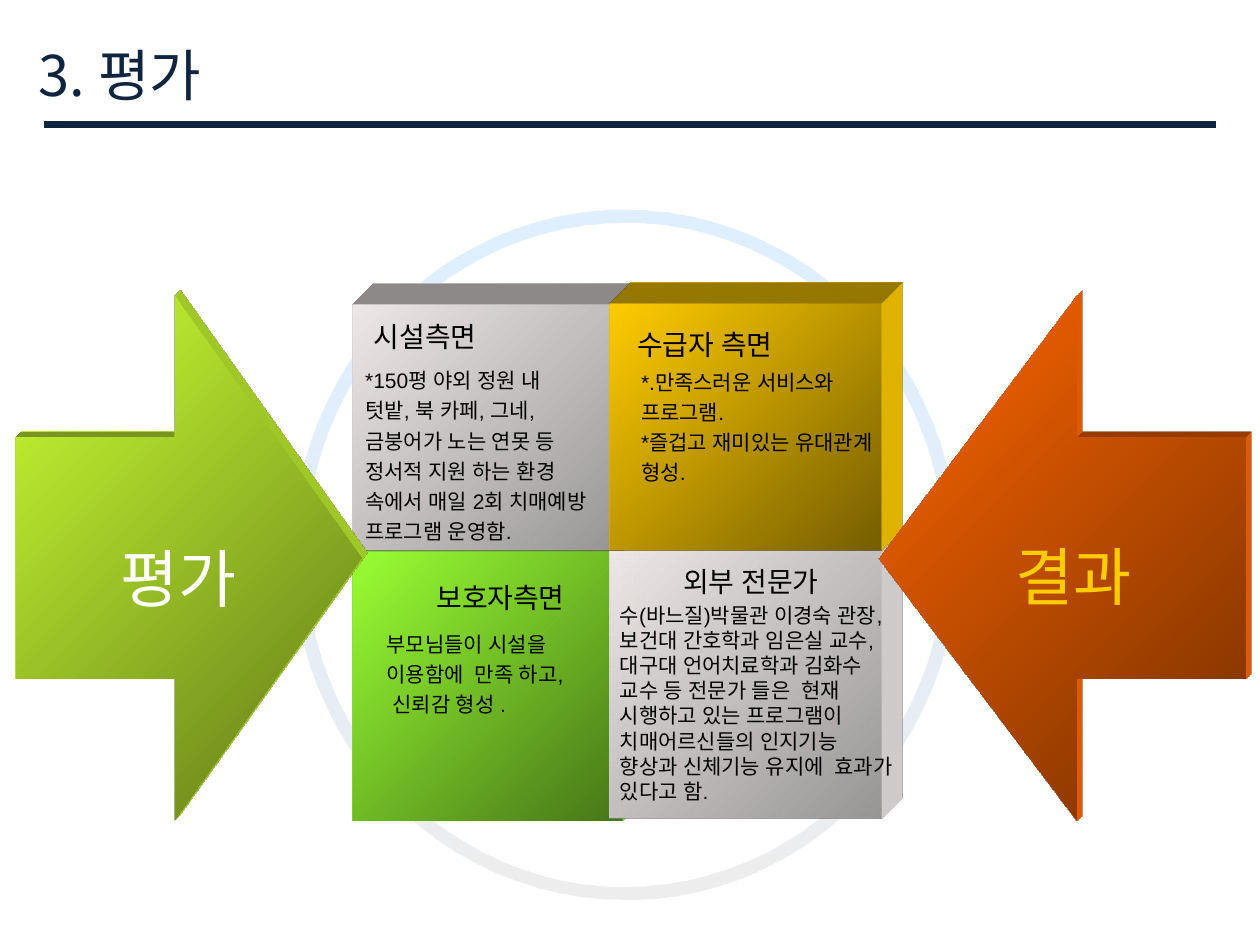
from lxml.etree import SubElement
from pptx import Presentation
from pptx.dml.color import RGBColor
from pptx.enum.shapes import MSO_CONNECTOR, MSO_SHAPE
from pptx.enum.text import MSO_AUTO_SIZE, PP_ALIGN
from pptx.oxml import parse_xml
from pptx.oxml.ns import nsdecls, qn
from pptx.util import Inches, Pt

BLACK = RGBColor(0x00, 0x00, 0x00)
WHITE = RGBColor(0xFF, 0xFF, 0xFF)
NAVY = RGBColor(0x0F, 0x24, 0x3E)
GOLD = RGBColor(0xFF, 0xCC, 0x00)
DARK_GOLD = RGBColor(0x76, 0x5E, 0x00)
SILVER = RGBColor(0xED, 0xE8, 0xE7)
DARK_SILVER = RGBColor(0x98, 0x95, 0x95)
GREEN = RGBColor(0x99, 0xFF, 0x33)
DARK_GREEN = RGBColor(0x47, 0x76, 0x18)
LIME = RGBColor(0xCC, 0xFF, 0x33)
DARK_LIME = RGBColor(0x5E, 0x76, 0x18)
ORANGE = RGBColor(0xFF, 0x66, 0x00)
DARK_ORANGE = RGBColor(0x76, 0x2F, 0x00)
SKY = RGBColor(0x99, 0xCC, 0xFF)
PALE_GRAY = RGBColor(0xDD, 0xDD, 0xDD)

HANGUL_FONT = "Montserrat"
BOX_DEPTH, ARROW_DEPTH = 0.47, 0.13

RING = (2.32, 1.66, 5.28, 5.48)
# left, top, width, height, light colour, dark colour
BOXES = [
    (2.8, 4.38, 2.14, 2.13, GREEN, DARK_GREEN),
    (4.84, 4.37, 2.16, 2.13, SILVER, DARK_SILVER),
    (2.8, 2.42, 2.15, 1.95, SILVER, DARK_SILVER),
    (4.84, 2.41, 2.16, 1.96, GOLD, DARK_GOLD),
]
# left, width, points left, light colour, dark colour
ARROWS = [
    (6.97, 2.92, True, ORANGE, DARK_ORANGE),
    (0.12, 2.75, False, LIME, DARK_LIME),
]

HEADING = dict(size=Pt(16), name="Noto Sans CJK KR")
BODY = dict(size=Pt(12), name="Arial")
ARROW_LABEL = dict(size=Pt(36), name="Montserrat")
TITLE = dict(size=Pt(32), name="Noto Sans CJK KR")

# place, paragraphs, font, colour, alignment, line spacing, wrapped
LEFT, CENTER, RIGHT = PP_ALIGN.LEFT, PP_ALIGN.CENTER, PP_ALIGN.RIGHT
TEXTS = [
    ((4.96, 2.55, 2.13, 0.37), ["수급자 측면"], HEADING, BLACK, LEFT, 1, True),
    ((4.99, 2.84, 2.07, 1.07),
     ["*.만족스러운 서비스와", "프로그램.", "*즐겁고 재미있는 유대관계 형성."],
     BODY, BLACK, LEFT, 1.2, True),
    ((2.87, 2.49, 2.3, 0.37), ["시설측면"], HEADING, BLACK, LEFT, 1, True),
    ((5, 4.43, 1.92, 0.54), ["외부 전문가"], HEADING, BLACK, CENTER, 1, True),
    ((2.97, 4.56, 1.61, 0.54), ["보호자측면"], HEADING, BLACK, RIGHT, 1, True),
    ((4.82, 4.73, 2.38, 1.94),
     ["수(바느질)박물관 이경숙 관장,  보건대 간호학과 임은실 교수, "
      "대구대 언어치료학과 김화수 교수 등 전문가 들은  현재 시행하고 있는 "
      "프로그램이 치매어르신들의 인지기능 향상과 신체기능 유지에  효과가 있다고 함."],
     BODY, BLACK, LEFT, 1, True),
    ((2.97, 4.92, 1.61, 0.83),
     ["부모님들이 시설을 이용함에  만족 하고,  신뢰감 형성 ."],
     BODY, BLACK, LEFT, 1.2, True),
    ((0.29, 4.23, 2.26, 0.48), ["평가"], ARROW_LABEL, WHITE, CENTER, 1, False),
    ((7.32, 4.22, 2.4, 0.37), ["결과"], ARROW_LABEL, GOLD, CENTER, 1, False),
    ((0.21, 0.27, 1.6, 0.64), ["3. 평가"], TITLE, NAVY, LEFT, 1, False),
    ((2.8, 2.83, 2.45, 1.53),
     ["*150평 야외 정원 내", "텃밭, 북 카페, 그네,", "금붕어가 노는 연못 등",
      "정서적 지원 하는 환경", "속에서 매일 2회 치매예방", "프로그램 운영함."],
     BODY, BLACK, LEFT, 1.2, True),
]


def add_gradient_shape(slide, preset, place, start, end, angle, opacity=(100, 100)):
    shape = slide.shapes.add_shape(preset, *map(Inches, place))
    shape.shadow.inherit = False
    shape.line.fill.background()
    stops = "".join(
        f'<a:gs pos="{pos}"><a:srgbClr val="{color}">'
        f'<a:alpha val="{alpha * 1000}"/></a:srgbClr></a:gs>'
        for pos, color, alpha in zip((0, 100000), (start, end), opacity))
    gradient = parse_xml(
        f'<a:gradFill {nsdecls("a")} rotWithShape="0"><a:gsLst>{stops}</a:gsLst>'
        f'<a:lin ang="{angle * 60000}" scaled="1"/></a:gradFill>')
    shape.element.spPr.find(qn("a:prstGeom")).addnext(gradient)
    return shape


def extrude(shape, depth, color):
    """Give the shape an oblique depth towards the top right."""
    shape.element.spPr.extend([
        parse_xml(
            f'<a:scene3d {nsdecls("a")}><a:camera prst="legacyObliqueTopRight"/>'
            '<a:lightRig rig="legacyFlat3" dir="b"/></a:scene3d>'),
        parse_xml(
            f'<a:sp3d {nsdecls("a")} extrusionH="{Inches(depth)}" '
            'prstMaterial="legacyMatte"><a:extrusionClr>'
            f'<a:srgbClr val="{color}"/></a:extrusionClr></a:sp3d>'),
    ])


def add_text(slide, place, paragraphs, font, color, align, spacing, wrapped):
    frame = slide.shapes.add_textbox(*map(Inches, place)).text_frame
    frame.word_wrap = wrapped
    frame.auto_size = MSO_AUTO_SIZE.SHAPE_TO_FIT_TEXT
    frame.text = "\n".join(paragraphs)
    for paragraph in frame.paragraphs:
        paragraph.alignment = align
        paragraph.line_spacing = spacing
        run = paragraph.runs[0]
        for key, value in font.items():
            setattr(run.font, key, value)
        run.font.color.rgb = color
        SubElement(run.font._element, qn("a:ea"), typeface=HANGUL_FONT)


def main():
    deck = Presentation()
    deck.slide_width, deck.slide_height = Inches(10), Inches(7.5)
    slide = deck.slides.add_slide(deck.slide_layouts[6])

    ring = add_gradient_shape(slide, MSO_SHAPE.DONUT, RING, SKY, PALE_GRAY, 90, (30, 50))
    ring.adjustments[0] = 0.02

    for *place, light, dark in BOXES:
        box = add_gradient_shape(slide, MSO_SHAPE.RECTANGLE, place, light, dark, 45)
        extrude(box, BOX_DEPTH, light)

    for left, width, points_left, light, dark in ARROWS:
        arrow = add_gradient_shape(
            slide, MSO_SHAPE.RIGHT_ARROW, (left, 2.34, width, 4.17), light, dark, 45)
        arrow.adjustments[0], arrow.adjustments[1] = 0.46, 0.54
        if points_left:
            arrow.element.spPr.xfrm.set("flipH", "1")
        extrude(arrow, ARROW_DEPTH, light)

    for text in TEXTS:
        add_text(slide, *text)

    rule = slide.shapes.add_connector(
        MSO_CONNECTOR.STRAIGHT, *map(Inches, (0.35, 0.99, 9.65, 0.99)))
    rule.line.color.rgb = NAVY
    rule.line.width = Pt(4)
    SubElement(rule.element.spPr, qn("a:effectLst"))

    deck.save("out.pptx")


if __name__ == "__main__":
    main()
